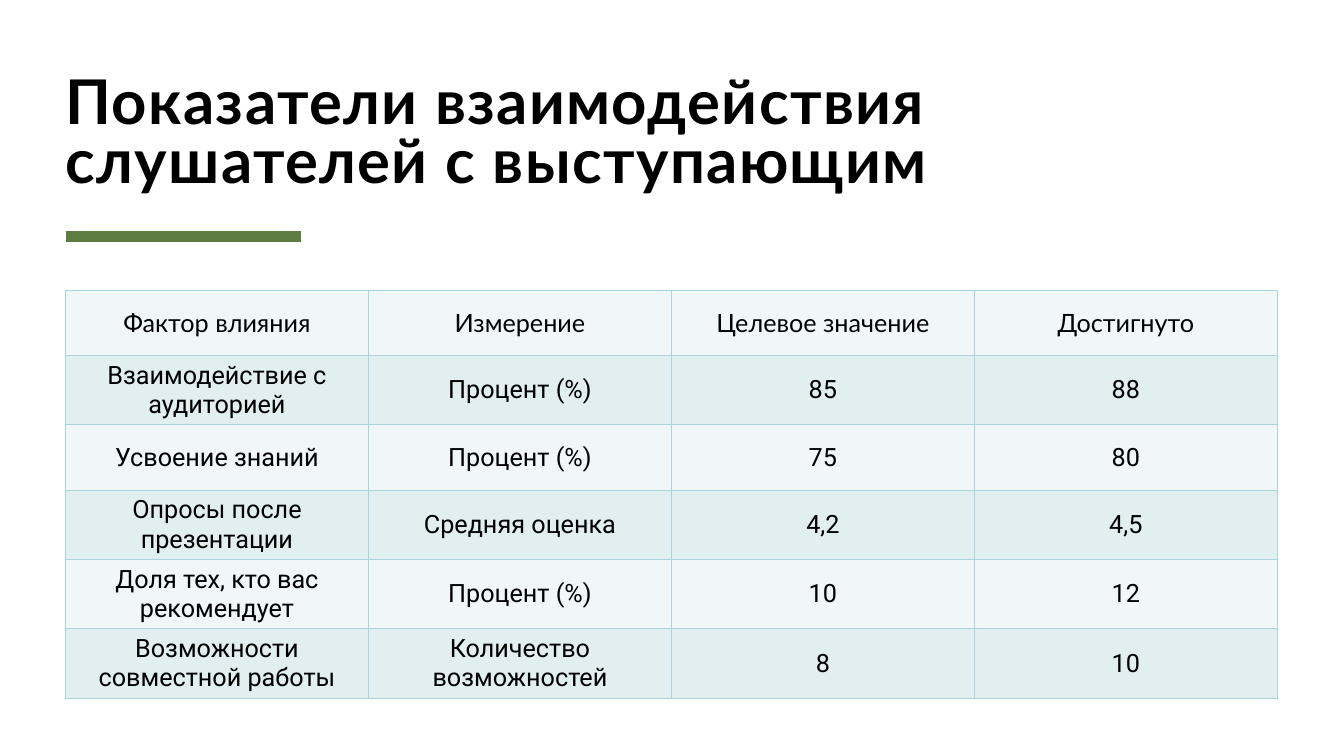
import pptx
import pptx.dml.color
import pptx.enum.shapes
import pptx.enum.text
import pptx.oxml
import pptx.oxml.ns
import pptx.util
import lxml.etree

Pt = pptx.util.Pt
RGB = pptx.dml.color.RGBColor
BLACK = RGB(0, 0, 0)
GREEN = RGB(0x5D, 0x7D, 0x40)
PALE = RGB(0xF1, 0xF7, 0xF8)
TINT = RGB(0xE2, 0xEF, 0xF1)
EDGE = RGB(0xA9, 0xD4, 0xDB)
ANCHOR = pptx.enum.text.MSO_ANCHOR
LEFT = 46.8

ROWS = [
    ("Фактор влияния", "Измерение", "Целевое значение", "Достигнуто"),
    ("Взаимодействие с аудиторией", "Процент (%)", "85", "88"),
    ("Усвоение знаний", "Процент (%)", "75", "80"),
    ("Опросы после презентации", "Средняя оценка", "4,2", "4,5"),
    ("Доля тех, кто вас рекомендует", "Процент (%)", "10", "12"),
    ("Возможности совместной работы", "Количество возможностей", "8", "10"),
]


class Deck:
    """Hold the style and the current slide, and draw each kind of element."""

    def __init__(self, show):
        self.slide = show.slides.add_slide(show.slide_layouts[5])
        self.head = {"name": "Lato", "size": Pt(44), "bold": True}
        self.top = {"name": "Lato", "size": Pt(18), "bold": False}
        self.body = {**self.top, "name": "Roboto"}

    def apply(self, item, form):
        for key, value in form.items():
            setattr(item, key, value)

    def label(self, frame, text, font, form):
        para = frame.paragraphs[0]
        run = para.add_run()
        run.text = text
        run.font.color.rgb = BLACK
        self.apply(run.font, font)
        self.apply(para, form)
        return run

    def title(self, text, left, top, width, height):
        box = self.slide.shapes.title
        self.apply(box, {"left": Pt(left), "top": Pt(top),
                         "width": Pt(width), "height": Pt(height)})
        frame = box.text_frame
        self.apply(frame, {"margin_left": 0, "margin_right": 0,
                           "margin_top": 0, "margin_bottom": 0,
                           "word_wrap": True,
                           "auto_size": pptx.enum.text.MSO_AUTO_SIZE.NONE,
                           "vertical_anchor": ANCHOR.BOTTOM})
        run = self.label(frame, text, self.head,
                         {"alignment": pptx.enum.text.PP_ALIGN.LEFT,
                          "line_spacing": 0.8})
        run.font._element.set("spc", "100")

    def rule(self, left, top, width, weight):
        line = self.slide.shapes.add_connector(
            pptx.enum.shapes.MSO_CONNECTOR.STRAIGHT,
            Pt(left), Pt(top), Pt(left + width), Pt(top))
        line.line.color.rgb = GREEN
        line.line.width = Pt(weight)
        lxml.etree.SubElement(line._element.spPr,
                              pptx.oxml.ns.qn("a:effectLst"))

    def border(self, cell):
        props = cell._tc.get_or_add_tcPr()
        for spot, side in enumerate(("lnL", "lnR", "lnT", "lnB")):
            props.insert(spot, pptx.oxml.parse_xml(
                f'<a:{side} {pptx.oxml.ns.nsdecls("a")} w="{Pt(1)}">'
                f'<a:solidFill><a:srgbClr val="{EDGE}"/></a:solidFill>'
                f'</a:{side}>'))

    def table(self, rows, left, top, width, height):
        grid = self.slide.shapes.add_table(
            len(rows), len(rows[0]), Pt(left), Pt(top),
            Pt(width), Pt(height)).table
        self.apply(grid, {"first_row": False, "horz_banding": False})
        for r, row in enumerate(rows):
            for c, text in enumerate(row):
                cell = grid.cell(r, c)
                cell.vertical_anchor = ANCHOR.MIDDLE
                cell.fill.solid()
                cell.fill.fore_color.rgb = TINT if r % 2 else PALE
                self.border(cell)
                self.label(cell.text_frame, text,
                           self.body if r else self.top,
                           {"alignment": pptx.enum.text.PP_ALIGN.CENTER})


def main():
    show = pptx.Presentation()
    show.slide_width, show.slide_height = Pt(960), Pt(540)
    deck = Deck(show)
    deck.rule(LEFT, 169.2, 168, 8)
    deck.title("Показатели взаимодействия слушателей с выступающим",
               LEFT, 46, 864, 93.6)
    deck.table(ROWS, LEFT, 207.2, 865.6, 280.8)
    show.save("out.pptx")


if __name__ == "__main__":
    main()
